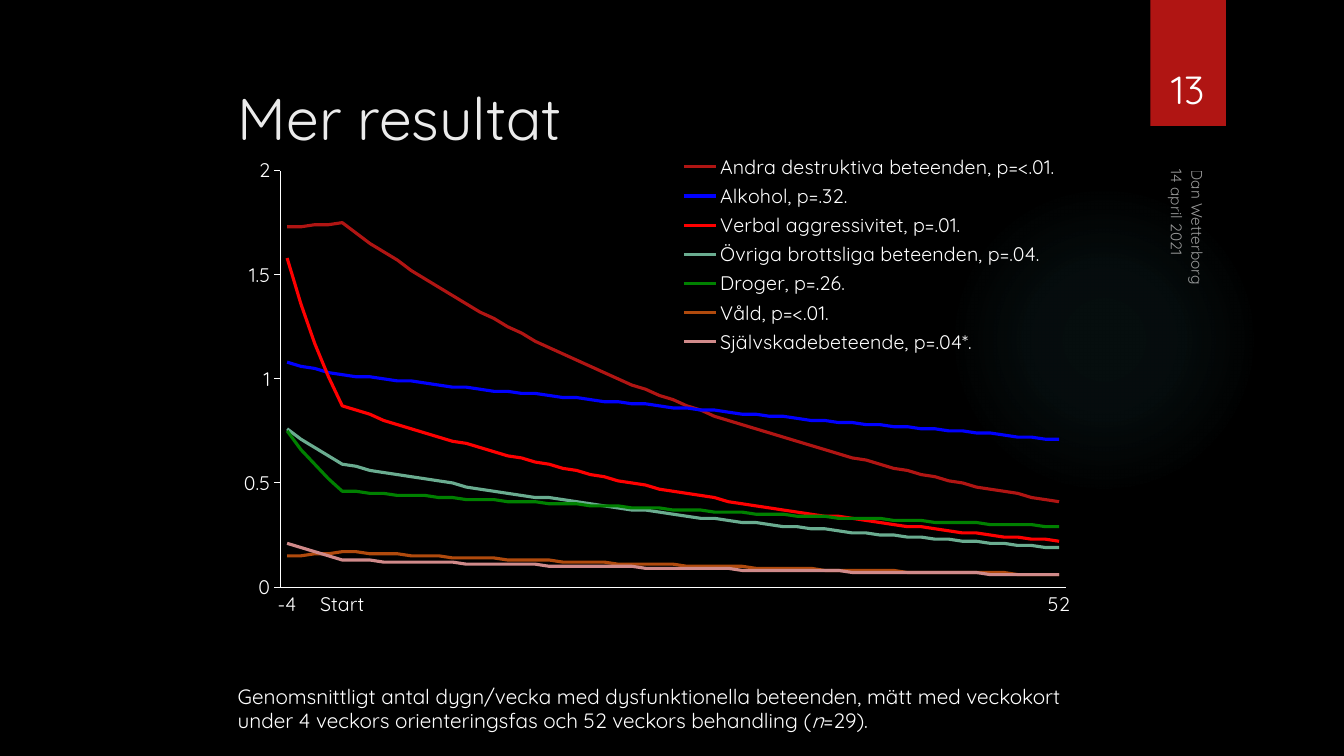
"""Build a dark results slide with a line chart of dysfunctional behaviours over 52 weeks."""
from dataclasses import dataclass

import pptx
import pptx.chart.data
import pptx.dml.color
import pptx.enum.chart
import pptx.enum.shapes
import pptx.enum.text
import pptx.oxml
import pptx.oxml.ns
import pptx.util

Inches = pptx.util.Inches
Anchor = pptx.enum.text.MSO_ANCHOR


@dataclass(frozen=True)
class Theme:
    """Colours, font and type sizes of the slide."""
    font: str = "Quicksand"
    background: str = "000000"
    text: str = "FFFFFF"
    title: str = "EBEBEB"
    ribbon: str = "B01513"
    glow: str = "50B9C1"
    title_size: float = 42
    number_size: float = 28
    caption_size: float = 14.8
    chart_size: float = 14
    footer_size: float = 11
    curve_width: float = 2.25
    axis_width: float = 0.75


THEME = Theme()
ORIENTATION_WEEKS, TREATMENT_WEEKS = 4, 52
BEHAVIOURS = [
    ("Andra destruktiva beteenden, p=<.01.", "B01513", (1.73, 1.75, 0.41)),
    ("Alkohol, p=.32.", "0000FF", (1.08, 1.02, 0.71)),
    ("Verbal aggressivitet, p=.01.", "FF0000", (1.58, 0.87, 0.22)),
    ("Övriga brottsliga beteenden, p=.04.", "6AAC90", (0.76, 0.59, 0.19)),
    ("Droger, p=.26.", "008000", (0.75, 0.46, 0.29)),
    ("Våld, p=<.01.", "B04A0D", (0.15, 0.17, 0.06)),
    ("Självskadebeteende, p=.04*.", "D08A8A", (0.21, 0.13, 0.06)),
]


def rgb(code):
    """Turn a hex code into a colour."""
    return pptx.dml.color.RGBColor.from_string(code)


def weekly_means(before, start, end):
    """Follow exponential change through the orientation and treatment weeks."""
    orientation = [before * (start / before) ** (week / ORIENTATION_WEEKS)
                   for week in range(ORIENTATION_WEEKS)]
    treatment = [start * (end / start) ** (week / TREATMENT_WEEKS)
                 for week in range(TREATMENT_WEEKS + 1)]
    return [round(mean, 2) for mean in orientation + treatment]


def week_labels():
    """Label only the first week, the start of treatment and the last week."""
    shown = {-ORIENTATION_WEEKS: "-4", 0: "Start", TREATMENT_WEEKS: "52"}
    return [shown.get(week, "") for week in range(-ORIENTATION_WEEKS, TREATMENT_WEEKS + 1)]


def add_block(slide, preset, left, top, width, height, color):
    """Add a borderless preset shape in one colour."""
    block = slide.shapes.add_shape(preset, Inches(left), Inches(top), Inches(width), Inches(height))
    block.shadow.inherit = False
    block.line.fill.background()
    block.fill.solid()
    block.fill.fore_color.rgb = rgb(color)
    return block


def fade_out(block, color, stops):
    """Fill a shape with a radial gradient given as (position, opacity) percentages."""
    stop_xml = "".join(
        f'<a:gs pos="{position * 1000}"><a:srgbClr val="{color}">'
        f'<a:alpha val="{opacity * 1000}"/></a:srgbClr></a:gs>' for position, opacity in stops)
    gradient = pptx.oxml.parse_xml(
        f'<a:gradFill {pptx.oxml.ns.nsdecls("a")}><a:gsLst>{stop_xml}</a:gsLst>'
        '<a:path path="circle"><a:fillToRect l="50000" t="50000" r="50000" b="50000"/>'
        '</a:path></a:gradFill>')
    solid = block._element.spPr.find(pptx.oxml.ns.qn("a:solidFill"))
    solid.getparent().replace(solid, gradient)


def add_text(slide, left, top, width, height, runs, size, color=THEME.text,
             anchor=Anchor.TOP, align=pptx.enum.text.PP_ALIGN.LEFT):
    """Add a one-paragraph text box and return it."""
    box = slide.shapes.add_textbox(Inches(left), Inches(top), Inches(width), Inches(height))
    box.text_frame.word_wrap = True
    box.text_frame.vertical_anchor = anchor
    paragraph = box.text_frame.paragraphs[0]
    paragraph.alignment = align
    for words, italic in runs:
        run = paragraph.add_run()
        run.text = words
        if italic:
            run.font.italic = True
    paragraph.font.name = THEME.font
    paragraph.font.size = pptx.util.Pt(size)
    paragraph.font.color.rgb = rgb(color)
    return box


def add_side_note(slide, left, top, width, words, anchor):
    """Add a half-transparent footer note that reads downwards."""
    note = add_text(slide, left, top, width, 0.33, [(words, False)], THEME.footer_size, anchor=anchor)
    note.rotation = 90
    for color in note._element.iter(pptx.oxml.ns.qn("a:srgbClr")):
        color.append(pptx.oxml.parse_xml(f'<a:alpha {pptx.oxml.ns.nsdecls("a")} val="60000"/>'))


def manual_layout(left, top, width, height, inner=False):
    """Make a chart layout element from fractions of the chart area."""
    target = '<c:layoutTarget val="inner"/>' if inner else ""
    sides = "".join(f'<c:{side} val="{value}"/>' for side, value in (
        ("xMode", "edge"), ("yMode", "edge"), ("x", left), ("y", top), ("w", width), ("h", height)))
    return pptx.oxml.parse_xml(
        f'<c:layout {pptx.oxml.ns.nsdecls("c")}><c:manualLayout>{target}{sides}'
        '</c:manualLayout></c:layout>')


def place(part, layout):
    """Give a plot area or legend its layout in the place the schema asks for."""
    for old in part.findall(pptx.oxml.ns.qn("c:layout")):
        part.remove(old)
    position = part.find(pptx.oxml.ns.qn("c:legendPos"))
    part.insert(0 if position is None else part.index(position) + 1, layout)


def add_behaviour_chart(slide):
    """Add the line chart with its axes and legend."""
    chart_data = pptx.chart.data.CategoryChartData()
    chart_data.categories = week_labels()
    for name, _, means in BEHAVIOURS:
        chart_data.add_series(name, weekly_means(*means))
    chart = slide.shapes.add_chart(
        pptx.enum.chart.XL_CHART_TYPE.LINE, Inches(2.26), Inches(1.39), Inches(8.66), Inches(5.04),
        chart_data).chart
    chart.has_title = False
    chart.font.name = THEME.font
    chart.font.size = pptx.util.Pt(THEME.chart_size)
    chart.font.color.rgb = rgb(THEME.text)
    chart.plots[0].vary_by_categories = False
    for curve, (_, color, _) in zip(chart.plots[0].series, BEHAVIOURS):
        curve.smooth = False
        curve.format.line.color.rgb = rgb(color)
        curve.format.line.width = pptx.util.Pt(THEME.curve_width)
        curve.marker.style = pptx.enum.chart.XL_MARKER_STYLE.NONE

    tick = pptx.enum.chart.XL_TICK_MARK
    for axis, mark in ((chart.category_axis, tick.NONE), (chart.value_axis, tick.OUTSIDE)):
        axis.has_major_gridlines = False
        axis.major_tick_mark = mark
        axis.minor_tick_mark = tick.NONE
        axis.format.line.color.rgb = rgb(THEME.text)
        axis.format.line.width = pptx.util.Pt(THEME.axis_width)
    chart.value_axis.minimum_scale = 0
    chart.value_axis.maximum_scale = 2
    chart.value_axis.major_unit = 0.5
    chart.value_axis.tick_labels.number_format = "General"
    chart.value_axis.tick_labels.number_format_is_linked = False
    label_skip = pptx.oxml.parse_xml(f'<c:tickLblSkip {pptx.oxml.ns.nsdecls("c")} val="1"/>')
    chart.category_axis._element.find(pptx.oxml.ns.qn("c:noMultiLvlLbl")).addprevious(label_skip)

    chart.has_legend = True
    chart.legend.position = pptx.enum.chart.XL_LEGEND_POSITION.RIGHT
    chart.legend.include_in_layout = False
    place(chart.legend._element, manual_layout(0.51, 0.02, 0.45, 0.41))
    place(chart._chartSpace.chart.plotArea, manual_layout(0.06, 0.06, 0.9, 0.82, inner=True))


def main():
    """Build and save the slide."""
    deck = pptx.Presentation()
    deck.slide_width, deck.slide_height = Inches(13.33), Inches(7.5)
    slide = deck.slides.add_slide(deck.slide_layouts[6])
    slide.background.fill.solid()
    slide.background.fill.fore_color.rgb = rgb(THEME.background)

    preset = pptx.enum.shapes.MSO_SHAPE
    glow = add_block(slide, preset.OVAL, 9.41, 1.83, 3.08, 3.08, THEME.glow)
    fade_out(glow, THEME.glow, [(0, 7), (36, 6), (69, 0)])
    add_block(slide, preset.RECTANGLE, 11.41, 0, 0.75, 1.25, THEME.ribbon)
    add_text(slide, 2.26, 0.76, 8.5, 0.94, [("Mer resultat", False)], THEME.title_size, THEME.title)
    caption = [("Genomsnittligt antal dygn/vecka med dysfunktionella beteenden, mätt med veckokort "
                "under 4 veckors orienteringsfas och 52 veckors behandling (", False),
               ("n", True), ("=29).", False)]
    add_text(slide, 2.26, 6.73, 8.5, 0.62, caption, THEME.caption_size)
    add_side_note(slide, 11.11, 1.96, 1.08, "14 april 2021", Anchor.TOP)
    add_side_note(slide, 9.79, 3.53, 4.22, "Dan Wetterborg", Anchor.BOTTOM)
    add_text(slide, 11.32, 0.32, 0.92, 0.84, [("13", False)], THEME.number_size,
             anchor=Anchor.BOTTOM, align=pptx.enum.text.PP_ALIGN.CENTER)
    add_behaviour_chart(slide)
    deck.save("out.pptx")


if __name__ == "__main__":
    main()
